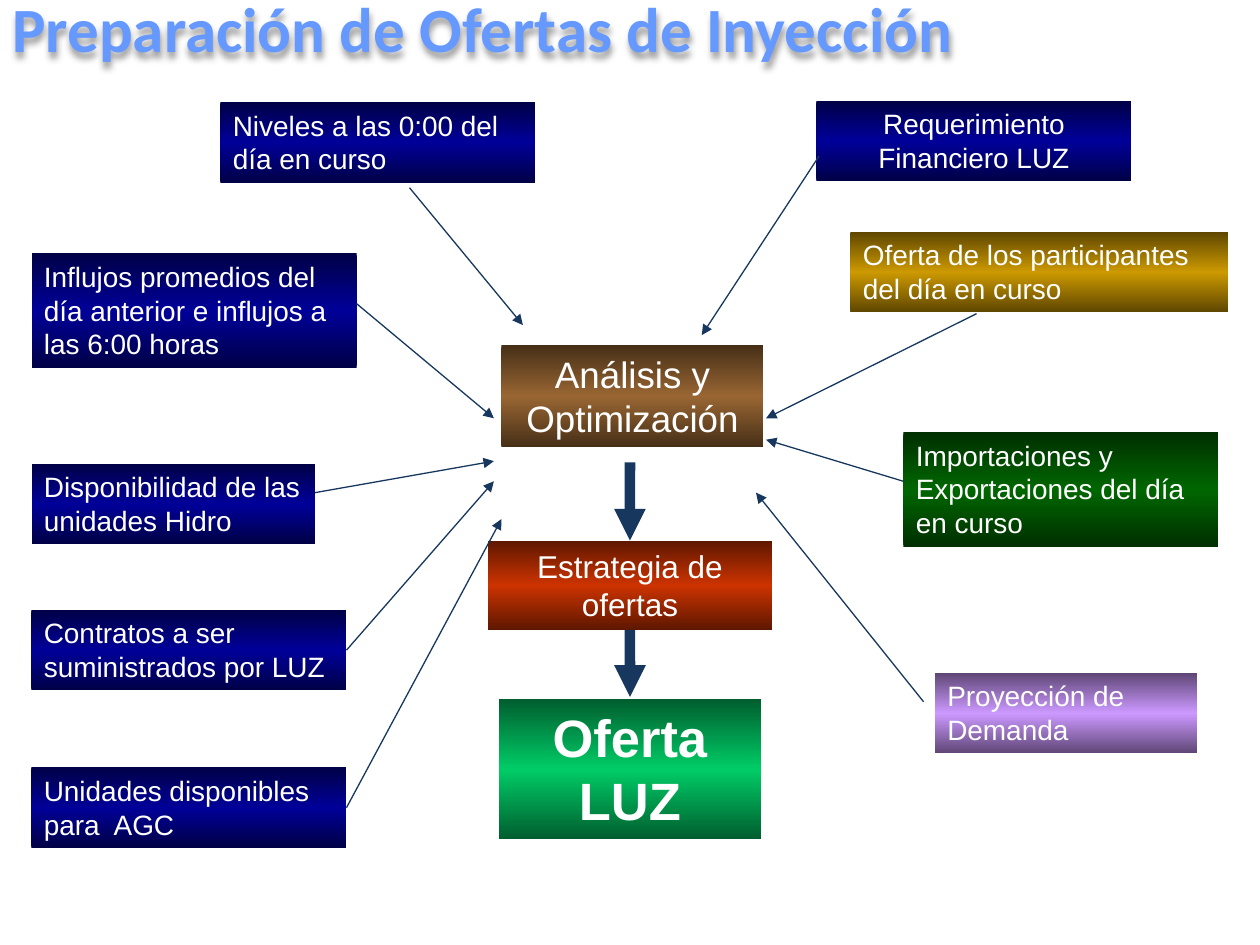
from lxml import etree
from pptx import Presentation
from pptx.dml.color import RGBColor
from pptx.enum.shapes import MSO_CONNECTOR, MSO_SHAPE
from pptx.enum.text import MSO_ANCHOR, MSO_AUTO_SIZE, PP_ALIGN
from pptx.oxml import parse_xml
from pptx.oxml.ns import nsdecls, qn
from pptx.util import Inches, Pt

STRAIGHT, RECTANGLE = MSO_CONNECTOR.STRAIGHT, MSO_SHAPE.RECTANGLE
LEFT, CENTER = PP_ALIGN.LEFT, PP_ALIGN.CENTER
TOP, MIDDLE = MSO_ANCHOR.TOP, MSO_ANCHOR.MIDDLE
GROW = MSO_AUTO_SIZE.SHAPE_TO_FIT_TEXT
TOP_SIDE, BOTTOM_SIDE, RIGHT_SIDE = 0, 2, 3

THEME = {
    "title": {"name": "Calibri", "size": Pt(36), "bold": True, "color": "6699FF"},
    "input": {"name": "Arial", "size": Pt(16), "bold": False, "color": "FFFFFF"},
    "analysis": {"name": "Arial", "size": Pt(21), "bold": False, "color": "FFFFFF"},
    "strategy": {"name": "Arial", "size": Pt(18), "bold": False, "color": "FFFFFF"},
    "offer": {"name": "Arial", "size": Pt(30), "bold": True, "color": "FFFFFF"},
    "blue": "000099", "gold": "CC9900", "green": "006600", "lilac": "CC99FF",
    "brown": "996633", "red": "CC3300", "emerald": "00CC66",
    "edge_shade": 0.46, "shadow": "000000",
    "arrow": "17375E", "thin": Pt(0.75), "thick": Pt(6),
}

TITLE = "Preparación de Ofertas de Inyección"
TITLE_PLACE = (0, -0.12, 8.5, 0.67)

# key: text, (left, top, width, height), fill, text style, alignment
BOXES = {
    "demanda": ("Proyección de Demanda", (7.42, 5.34, 2.08, 0.64), "lilac", "input", LEFT),
    "hidro": ("Disponibilidad de las unidades Hidro", (0.25, 3.68, 2.25, 0.64),
              "blue", "input", LEFT),
    "comercio": ("Importaciones y Exportaciones del día en curso",
                 (7.17, 3.43, 2.5, 0.91), "green", "input", LEFT),
    "contratos": ("Contratos a ser suministrados por LUZ", (0.25, 4.84, 2.5, 0.64),
                  "blue", "input", LEFT),
    "influjos": ("Influjos promedios del día anterior e influjos a las 6:00 horas",
                 (0.25, 2.01, 2.58, 0.91), "blue", "input", LEFT),
    "niveles": ("Niveles a las 0:00 del día en curso", (1.75, 0.81, 2.5, 0.64),
                "blue", "input", LEFT),
    "agc": ("Unidades disponibles para  AGC", (0.25, 6.09, 2.5, 0.64),
            "blue", "input", LEFT),
    "participantes": ("Oferta de los participantes del día en curso",
                      (6.75, 1.84, 3, 0.64), "gold", "input", LEFT),
    "analisis": ("Análisis y Optimización", (3.98, 2.74, 2.08, 0.81),
                 "brown", "analysis", CENTER),
    "requerimiento": ("Requerimiento Financiero LUZ", (6.48, 0.8, 2.5, 0.64),
                      "blue", "input", CENTER),
    "estrategia": ("Estrategia de ofertas", (3.87, 4.29, 2.26, 0.71),
                   "red", "strategy", CENTER),
    "oferta": ("Oferta LUZ", (3.96, 5.55, 2.08, 1.11), "emerald", "offer", CENTER),
}

# start, end, weight, box side joined at start, box side joined at end
ARROWS = [
    ((2.75, 6.41), (3.98, 4.12), "thin", ("agc", RIGHT_SIDE), None),
    ((2.75, 5.16), (3.92, 3.82), "thin", ("contratos", RIGHT_SIDE), None),
    ((2.5, 3.91), (3.92, 3.66), "thin", None, None),
    ((2.83, 2.41), (3.92, 3.32), "thin", None, None),
    ((3.25, 1.49), (4.15, 2.58), "thin", None, None),
    ((6.5, 1.24), (5.57, 2.66), "thin", None, None),
    ((7.75, 2.49), (6.08, 3.32), "thin", None, None),
    ((7.33, 5.57), (6, 3.91), "thin", None, None),
    ((7.17, 3.82), (6.08, 3.49), "thin", None, None),
    ((5, 5), (5, 5.53), "thick", ("estrategia", BOTTOM_SIDE), None),
    ((5, 3.67), (5, 4.29), "thick", None, ("estrategia", TOP_SIDE)),
]


def inches(values):
    return [Inches(value) for value in values]


def write(shape, text, style, alignment, anchor):
    """Put one wrapped, styled paragraph in the shape."""
    frame = shape.text_frame
    frame.word_wrap = True
    frame.vertical_anchor = anchor
    paragraph = frame.paragraphs[0]
    paragraph.alignment = alignment
    run = paragraph.add_run()
    run.text = text
    for attribute, value in THEME[style].items():
        if attribute == "color":
            run.font.color.rgb = RGBColor.from_string(value)
        else:
            setattr(run.font, attribute, value)


def shade_edges(shape, color):
    """Fill from a dark edge through the colour and back, top to bottom."""
    channels = RGBColor.from_string(color)
    edge = RGBColor(*(round(channel * THEME["edge_shade"]) for channel in channels))
    stops = "".join(
        f'<a:gs pos="{position}"><a:srgbClr val="{stop}"/></a:gs>'
        for position, stop in ((0, edge), (50000, color), (100000, edge)))
    gradient = parse_xml(
        f'<a:gradFill {nsdecls("a")} rotWithShape="1"><a:gsLst>{stops}</a:gsLst>'
        '<a:lin ang="5400000" scaled="1"/></a:gradFill>')
    shape._element.spPr.find(qn("a:prstGeom")).addnext(gradient)


def add_title(slide):
    title = slide.shapes.add_textbox(*inches(TITLE_PLACE))
    write(title, TITLE, "title", LEFT, MIDDLE)
    # Soft shadow below the letters
    title._element.spPr.append(parse_xml(
        f'<a:effectLst {nsdecls("a")}><a:outerShdw blurRad="50800" dist="38100" '
        f'dir="5400000" algn="t"><a:srgbClr val="{THEME["shadow"]}">'
        '<a:alpha val="40000"/></a:srgbClr></a:outerShdw></a:effectLst>'))


def add_box(slide, text, place, color, style, alignment):
    box = slide.shapes.add_shape(RECTANGLE, *inches(place))
    box.shadow.inherit = False
    box.line.fill.background()
    shade_edges(box, THEME[color])
    write(box, text, style, alignment, TOP)
    box.text_frame.auto_size = GROW
    return box


def add_arrow(slide, boxes, start, end, weight, start_join, end_join):
    arrow = slide.shapes.add_connector(STRAIGHT, *inches(start + end))
    if start_join:
        arrow.begin_connect(boxes[start_join[0]], start_join[1])
    if end_join:
        arrow.end_connect(boxes[end_join[0]], end_join[1])
    arrow.line.color.rgb = RGBColor.from_string(THEME["arrow"])
    arrow.line.width = THEME[weight]
    etree.SubElement(arrow.line._get_or_add_ln(), qn("a:tailEnd"), type="triangle")
    etree.SubElement(arrow._element.spPr, qn("a:effectLst"))


def main():
    deck = Presentation()
    deck.slide_width, deck.slide_height = Inches(10), Inches(7.5)
    slide = deck.slides.add_slide(deck.slide_layouts[6])
    add_title(slide)
    # Inputs, analysis, strategy and final offer
    boxes = {key: add_box(slide, *content) for key, content in BOXES.items()}
    # Flow between the boxes
    for arrow in ARROWS:
        add_arrow(slide, boxes, *arrow)
    deck.save("out.pptx")


if __name__ == "__main__":
    main()
